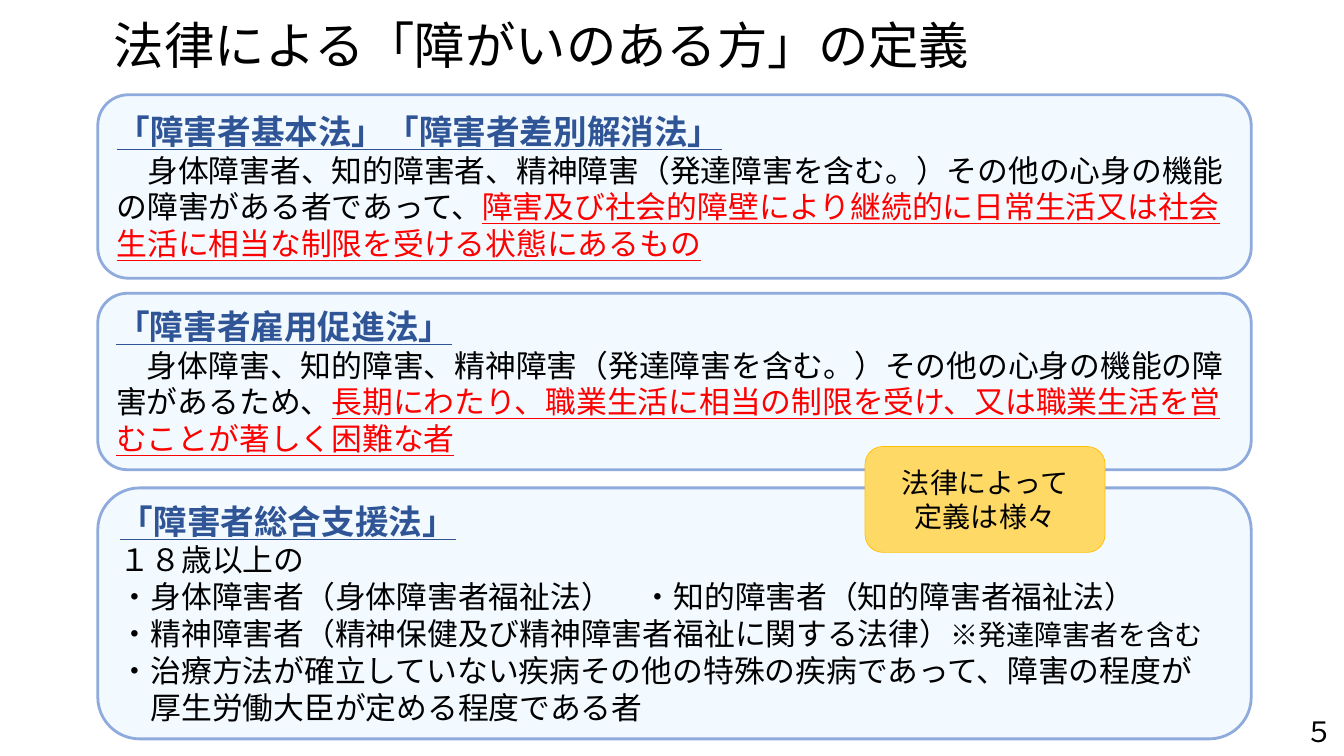
import dataclasses

import lxml.etree
import pptx
import pptx.dml.color
import pptx.enum.shapes
import pptx.enum.text
import pptx.oxml.ns
import pptx.util

Inches = pptx.util.Inches
Pt = pptx.util.Pt
Align = pptx.enum.text.PP_ALIGN
Anchor = pptx.enum.text.MSO_ANCHOR
Preset = pptx.enum.shapes.MSO_SHAPE

FONT = "Noto Sans CJK JP"
BLACK = "000000"
RED = "FF0000"
LAW_BLUE = "2F5597"


@dataclasses.dataclass(frozen=True)
class Phrase:
    text: str
    size: float = 22
    color: str = BLACK
    bold: bool = False
    underline: bool = False


@dataclasses.dataclass(frozen=True)
class LawPanel:
    top: float
    height: float
    law: str
    definition: list[list[Phrase]]


def rgb(color: str) -> pptx.dml.color.RGBColor:
    return pptx.dml.color.RGBColor.from_string(color)


def write(paragraph, text: str, *, size: float = 22, color: str = BLACK,
          bold: bool = False, underline: bool = False) -> None:
    run = paragraph.add_run()
    run.text = text
    run.font.name = FONT
    run.font.size = Pt(size)
    run.font.bold = bold
    run.font.underline = underline
    run.font.color.rgb = rgb(color)
    latin = run.font._element.find(pptx.oxml.ns.qn("a:latin"))
    east_asian = lxml.etree.Element(pptx.oxml.ns.qn("a:ea"), typeface=FONT)
    latin.addnext(east_asian)


def fill_frame(frame, paragraphs: list[list[Phrase]], align=Align.LEFT) -> None:
    for index, phrases in enumerate(paragraphs):
        paragraph = frame.add_paragraph() if index else frame.paragraphs[0]
        paragraph.alignment = align
        for phrase in phrases:
            write(paragraph, **dataclasses.asdict(phrase))


def add_box(slide, preset, left: float, top: float, width: float, height: float,
            fill: str, line: str, line_width: float):
    box = slide.shapes.add_shape(
        preset, Inches(left), Inches(top), Inches(width), Inches(height))
    box.shadow.inherit = False
    box.fill.solid()
    box.fill.fore_color.rgb = rgb(fill)
    box.line.color.rgb = rgb(line)
    box.line.width = Pt(line_width)
    box.text_frame.word_wrap = True
    box.text_frame.vertical_anchor = Anchor.MIDDLE
    return box


def add_law_panel(slide, panel: LawPanel) -> None:
    box = add_box(slide, Preset.ROUNDED_RECTANGLE, 0.97, panel.top, 11.44,
                  panel.height, "F3FAFF", "8FAADC", 2)
    frame = box.text_frame
    frame.margin_top = 0
    frame.margin_bottom = Inches(0.2)
    heading = Phrase(panel.law, 24, LAW_BLUE, bold=True, underline=True)
    fill_frame(frame, [[heading], *panel.definition])
    frame.paragraphs[0].line_spacing = 1.5


LAW_PANELS = [
    LawPanel(0.94, 1.82, "「障害者基本法」「障害者差別解消法」", [[
        Phrase("　身体障害者、知的障害者、精神障害（発達障害を含む。）その他の心身の機能の障害がある者であって、"),
        Phrase("障害及び社会的障壁により継続的に日常生活又は社会生活に相当な制限を受ける状態にあるもの",
               color=RED, underline=True),
    ]]),
    LawPanel(2.91, 1.75, "「障害者雇用促進法」", [[
        Phrase("　身体障害、知的障害、精神障害（発達障害を含む。）その他の心身の機能の障害があるため、"),
        Phrase("長期にわたり、職業生活に相当の制限を受け、又は職業生活を営むことが著しく困難な者",
               color=RED, underline=True),
    ]]),
    LawPanel(4.84, 2.49, "「障害者総合支援法」", [
        [Phrase("１８歳以上の")],
        [Phrase("・身体障害者（身体障害者福祉法）　・知的障害者（知的障害者福祉法）")],
        [Phrase("・精神障害者（精神保健及び精神障害者福祉に関する法律）"),
         Phrase("※発達障害者を含む", 20)],
        [Phrase("・治療方法が確立していない疾病その他の特殊の疾病であって、障害の程度が")],
        [Phrase("　厚生労働大臣が定める程度である者")],
    ]),
]


def main() -> None:
    deck = pptx.Presentation()
    deck.slide_width = Inches(13.33)
    deck.slide_height = Inches(7.5)
    slide = deck.slides.add_slide(deck.slide_layouts[5])

    title = slide.shapes.title
    title.left, title.top = Inches(1.03), Inches(0.09)
    title.width, title.height = Inches(8.93), Inches(0.71)
    title.text_frame.word_wrap = False
    title.text_frame.vertical_anchor = Anchor.TOP
    fill_frame(title.text_frame, [[Phrase("法律による「障がいのある方」の定義", 36)]])

    for panel in LAW_PANELS:
        add_law_panel(slide, panel)

    remark = add_box(slide, Preset.FLOWCHART_ALTERNATE_PROCESS, 8.58, 4.43, 2.38,
                     1.05, "FFD966", "FFC000", 0.5)
    fill_frame(remark.text_frame,
               [[Phrase("法律によって", 20)], [Phrase("定義は様々", 20)]], Align.CENTER)

    page_number = slide.shapes.add_textbox(
        Inches(12.85), Inches(7.04), Inches(0.48), Inches(0.44))
    page_number.text_frame.word_wrap = False
    fill_frame(page_number.text_frame, [[Phrase("５", 20)]])

    deck.save("out.pptx")


if __name__ == "__main__":
    main()
